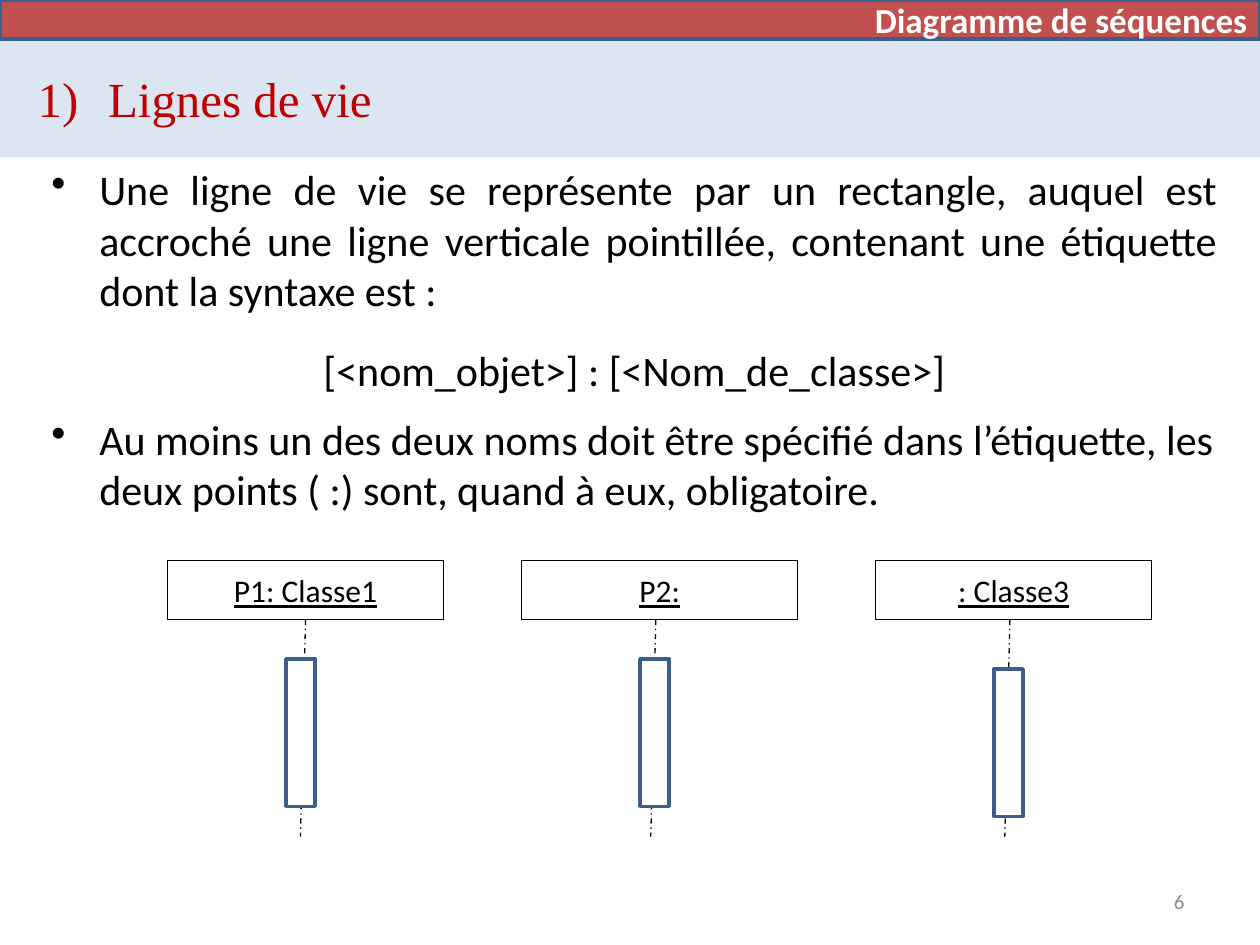
from lxml import etree
from pptx import Presentation
from pptx.dml.color import RGBColor
from pptx.enum.dml import MSO_LINE
from pptx.enum.shapes import MSO_CONNECTOR, MSO_SHAPE
from pptx.enum.text import MSO_ANCHOR, PP_ALIGN
from pptx.oxml.ns import qn
from pptx.util import Inches, Pt

RECT, STRAIGHT = MSO_SHAPE.RECTANGLE, MSO_CONNECTOR.STRAIGHT
DASH_DOT = MSO_LINE.DASH_DOT
MIDDLE, TOP = MSO_ANCHOR.MIDDLE, MSO_ANCHOR.TOP
LEFT, CENTER, RIGHT, JUSTIFY = PP_ALIGN.LEFT, PP_ALIGN.CENTER, PP_ALIGN.RIGHT, PP_ALIGN.JUSTIFY

COLORS = {
    "black": "000000", "white": "FFFFFF", "pale": "DCE6F2", "red": "C0504D",
    "title": "C00000", "blue": "3A5F8C", "grey": "8C8C8C",
}
DOT = ("buChar", {"char": "•"})
NUMBER = ("buAutoNum", {"type": "arabicParenR"})

HEADER = "Diagramme de séquences"
TITLE = "Lignes de vie"
PAGE = "6"
BODY = [
    ("Une ligne de vie se représente par un rectangle, auquel est accroché une ligne "
     "verticale pointillée, contenant une étiquette dont la syntaxe est :",
     JUSTIFY, DOT, 0, 12),
    ("[<nom_objet>] : [<Nom_de_classe>]", CENTER, None, 4.8, 6),
    ("Au moins un des deux noms doit être spécifié dans l’étiquette, les deux points "
     "( :) sont, quand à eux, obligatoire.", LEFT, DOT, 4.8, 0),
]
LIFELINES = [("P1: Classe1", 0, 0), ("P2:", -0.03, 0), (": Classe3", -0.03, 0.08)]

W, H = 10, 7.5
HEAD_H, TITLE_H = 0.31, 0.94
COL_X, COL_STEP = 1.33, 2.81
BOX_Y, BOX_W, BOX_H = 4.45, 2.19, 0.47
BAR_DX, BAR_Y, BAR_W, BAR_H = 0.94, 5.23, 0.23, 1.17
LINE_END, LINE_LEAN = 6.64, 0.04


def rgb(name):
    return RGBColor.from_string(COLORS[name])


def add_rect(s, box, fill=None, line=None, width=0):
    sp = s.shapes.add_shape(RECT, *map(Inches, box))
    sp.shadow.inherit = False
    if fill:
        sp.fill.solid()
        sp.fill.fore_color.rgb = rgb(fill)
    else:
        sp.fill.background()
    if line:
        sp.line.color.rgb = rgb(line)
        sp.line.width = Pt(width)
    else:
        sp.line.fill.background()
    return sp


def set_frame(sp, anchor=MIDDLE):
    tf = sp.text_frame
    tf.word_wrap = True
    tf.vertical_anchor = anchor
    return tf


def write(p, text, align, color="black", bullet=None, indent=None, before=0, after=0, **font):
    p.alignment, p.space_before, p.space_after = align, Pt(before), Pt(after)
    pPr = p._p.get_or_add_pPr()
    if indent:
        pPr.set("marL", str(Inches(indent[0])))
        pPr.set("indent", str(Inches(indent[1])))
    if bullet:
        tag, attrs = bullet
        etree.SubElement(pPr, qn("a:" + tag), attrs)
    r = p.add_run()
    r.text = text
    r.font.color.rgb = rgb(color)
    for key, value in {"name": "Calibri", **font}.items():
        setattr(r.font, key, value)


def add_lifeline(s, col, label, line_dx, bar_dy):
    x = COL_X + col * COL_STEP
    box = add_rect(s, (x, BOX_Y, BOX_W, BOX_H), line="black", width=0.5)
    write(set_frame(box).paragraphs[0], label, CENTER, size=Pt(18), underline=True)
    top = x + BOX_W / 2 + line_dx
    cx = s.shapes.add_connector(
        STRAIGHT, *map(Inches, (top, BOX_Y + BOX_H, top - LINE_LEAN, LINE_END)))
    if not line_dx:
        cx.begin_connect(box, 2)
    cx.line.color.rgb = rgb("black")
    cx.line.width = Pt(0.75)
    cx.line.dash_style = DASH_DOT
    etree.SubElement(cx._element.spPr, qn("a:effectLst"))
    add_rect(s, (x + BAR_DX, BAR_Y + bar_dy, BAR_W, BAR_H), "white", "blue", 2)


def main():
    prs = Presentation()
    prs.slide_width, prs.slide_height = Inches(W), Inches(H)
    s = prs.slides.add_slide(prs.slide_layouts[6])

    title = add_rect(s, (0, HEAD_H, W, TITLE_H), "pale")
    write(set_frame(title).paragraphs[0], TITLE, LEFT, "title", NUMBER, (0.76, -0.56),
          name="Times New Roman", size=Pt(28))

    body = s.shapes.add_textbox(*map(Inches, (0.31, HEAD_H + TITLE_H, 9.45, 5.86)))
    tf = set_frame(body, TOP)
    for i, (text, align, bullet, before, after) in enumerate(BODY):
        p = tf.add_paragraph() if i else tf.paragraphs[0]
        write(p, text, align, bullet=bullet, indent=(0.38, -0.38),
              before=before, after=after, size=Pt(24))

    header = add_rect(s, (0, 0, W, HEAD_H), "red", "blue", 2)
    write(set_frame(header).paragraphs[0], HEADER, RIGHT, "white", size=Pt(20), bold=True)

    page = s.shapes.add_textbox(*map(Inches, (7.17, 6.95, 2.33, 0.4)))
    write(set_frame(page).paragraphs[0], PAGE, RIGHT, "grey", size=Pt(12))

    for col, lifeline in enumerate(LIFELINES):
        add_lifeline(s, col, *lifeline)

    prs.save("out.pptx")


if __name__ == "__main__":
    main()
